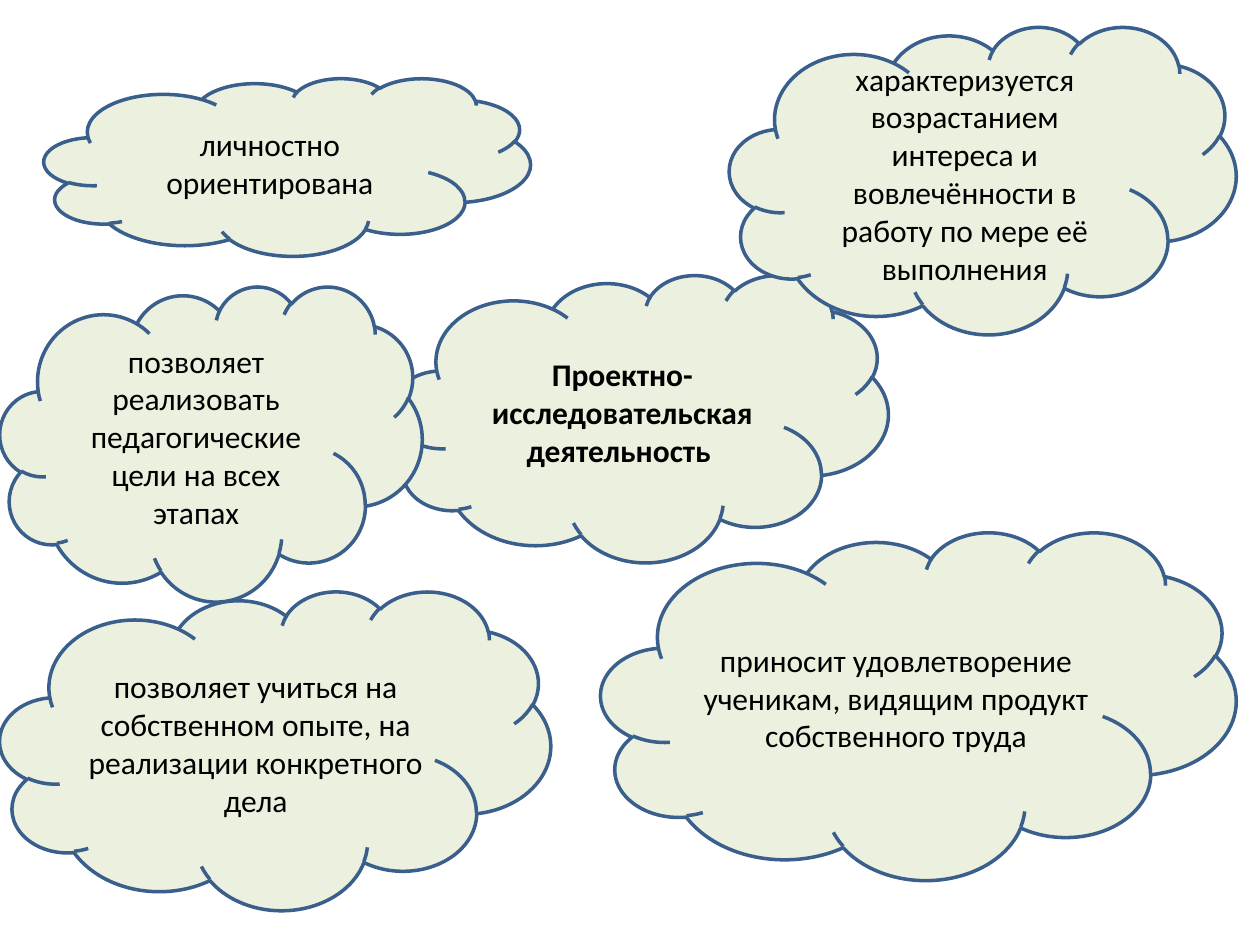
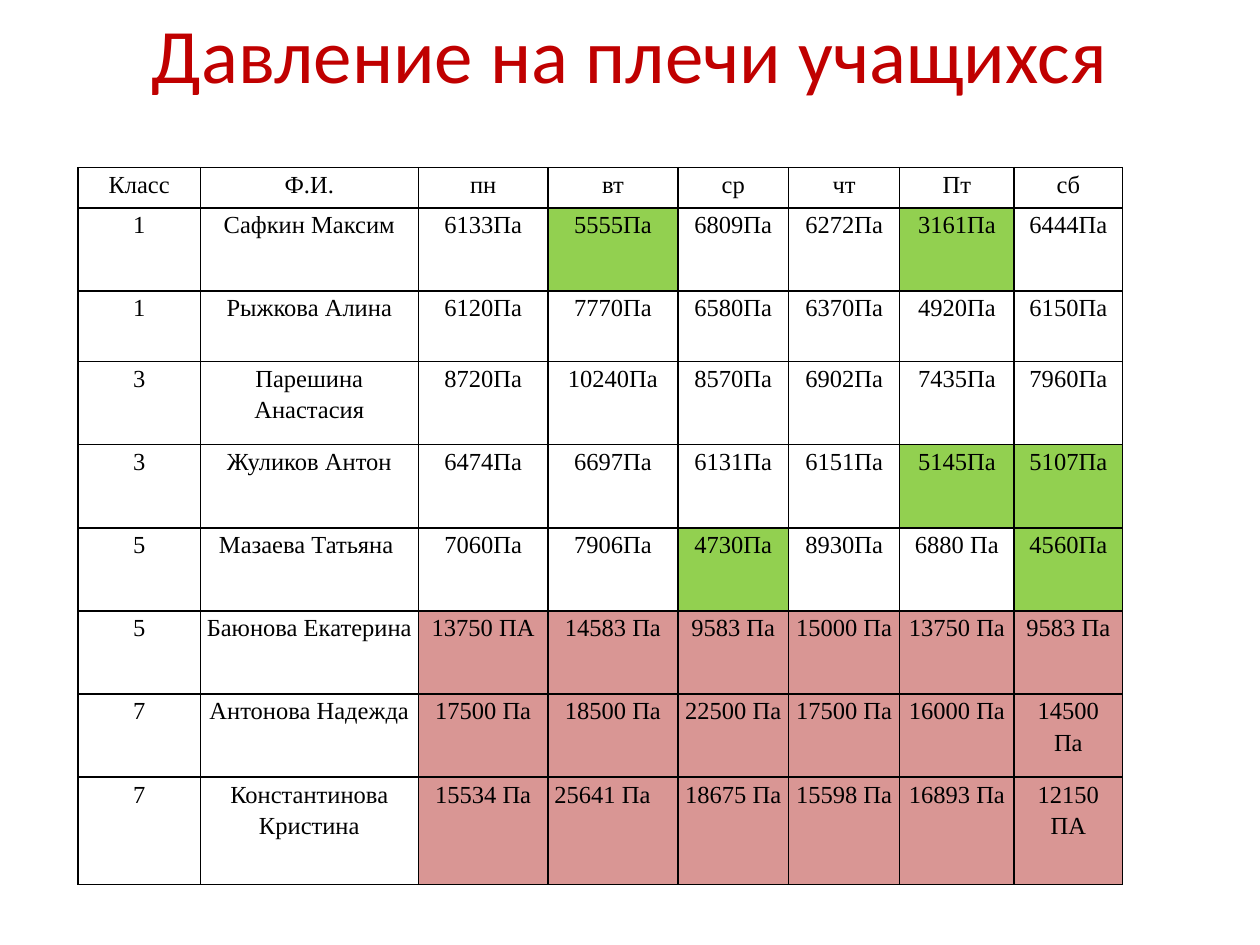
from lxml.etree import SubElement
from pptx import Presentation
from pptx.dml.color import RGBColor
from pptx.enum.shapes import MSO_SHAPE
from pptx.enum.text import MSO_ANCHOR, PP_ALIGN
from pptx.oxml.ns import qn
from pptx.util import Inches, Pt

BLACK = "000000"
RED = "C00000"
CLOUD_FILL = "EBF1DE"
CLOUD_LINE = "3A5F8C"
LIGHT_LOAD = "92D050"
HEAVY_LOAD = "D99694"


def format_text(para, font_name, size, colour, bold=False, align=PP_ALIGN.CENTER):
    para.alignment = align
    for span in para.runs:
        span.font.name = font_name
        span.font.size = Pt(size)
        span.font.bold = bold
        span.font.color.rgb = RGBColor.from_string(colour)


def add_borders(cell, colour, width):
    properties = cell._tc.get_or_add_tcPr()
    for position, side in enumerate(("lnL", "lnR", "lnT", "lnB")):
        line = SubElement(properties, qn(f"a:{side}"), w=str(Pt(width)))
        fill = SubElement(line, qn("a:solidFill"))
        SubElement(fill, qn("a:srgbClr"), val=colour)
        properties.remove(line)
        properties.insert(position, line)


deck = Presentation()
deck.slide_width = Inches(10)
deck.slide_height = Inches(7.5)

page = deck.slides.add_slide(deck.slide_layouts[6])
clouds = [
    (3.11, 2.18, 3.94, 2.28, "Проектно-исследовательская деятельность "),
    (0.35, 0.62, 3.86, 1.41, "личностно ориентирована"),
    (5.79, 0.21, 4.02, 2.44, "характеризуется возрастанием интереса и вовлечённости в работу по мере её выполнения"),
    (0, 2.27, 3.35, 2.5, "позволяет реализовать педагогические цели на всех этапах"),
    (0, 4.69, 4.37, 2.53, "позволяет учиться на собственном опыте, на реализации конкретного дела"),
    (4.77, 4.22, 5.04, 2.76, "приносит удовлетворение ученикам, видящим продукт собственного труда"),
]
for index, (left, top, width, height, text) in enumerate(clouds):
    cloud = page.shapes.add_shape(
        MSO_SHAPE.CLOUD, Inches(left), Inches(top), Inches(width), Inches(height))
    cloud.shadow.inherit = False
    cloud.fill.solid()
    cloud.fill.fore_color.rgb = RGBColor.from_string(CLOUD_FILL)
    cloud.line.color.rgb = RGBColor.from_string(CLOUD_LINE)
    cloud.line.width = Pt(2)
    cloud.text_frame.text = text
    cloud.text_frame.word_wrap = True
    cloud.text_frame.vertical_anchor = MSO_ANCHOR.MIDDLE
    format_text(cloud.text_frame.paragraphs[0], "Calibri", 18, BLACK, bold=index == 0)

page = deck.slides.add_slide(deck.slide_layouts[5])
title = page.shapes.title
title.left, title.top, title.width, title.height = Inches(0.5), Inches(0), Inches(9), Inches(1.09)
title.text_frame.text = "Давление на плечи учащихся"
title.text_frame.vertical_anchor = MSO_ANCHOR.TOP
format_text(title.text_frame.paragraphs[0], "Calibri", 44, RED)

pressures = [
    ("Класс", "Ф.И.", "пн", "вт", "ср", "чт", "Пт", "сб"),
    ("1", "Сафкин Максим", "6133Па", "5555Па", "6809Па", "6272Па", "3161Па", "6444Па"),
    ("1", "Рыжкова Алина", "6120Па", "7770Па", "6580Па", "6370Па", "4920Па", "6150Па"),
    ("3", "Парешина Анастасия", "8720Па", "10240Па", "8570Па", "6902Па", "7435Па", "7960Па"),
    ("3", "Жуликов Антон", "6474Па", "6697Па", "6131Па", "6151Па", "5145Па", "5107Па"),
    ("5", "Мазаева Татьяна ", "7060Па", "7906Па", "4730Па", "8930Па", "6880 Па", "4560Па"),
    ("5", "Баюнова Екатерина", "13750 ПА", "14583 Па", "9583 Па", "15000 Па", "13750 Па", "9583 Па"),
    ("7", "Антонова Надежда", "17500 Па", "18500 Па", "22500 Па", "17500 Па", "16000 Па", "14500 Па"),
    ("7", "Константинова Кристина", "15534 Па", "25641 Па", "18675 Па", "15598 Па", "16893 Па", "12150 ПА"),
]
column_widths = [0.97, 1.73, 1.03, 1.03, 0.88, 0.88, 0.91, 0.86]
row_heights = [0.32, 0.66, 0.56, 0.66, 0.66, 0.66, 0.66, 0.66, 0.85]
light_cells = {(1, 3), (1, 6), (4, 6), (4, 7), (5, 4), (5, 7)}
first_heavy_row, first_day_column = 6, 2
left_aligned_cell = (8, 3)

table = page.shapes.add_table(
    len(row_heights), len(column_widths), Inches(0.62), Inches(1.33),
    Inches(sum(column_widths)), Inches(sum(row_heights))).table
table.first_row = False
table.horz_banding = False
for column, width in zip(table.columns, column_widths):
    column.width = Inches(width)
for row, height in zip(table.rows, row_heights):
    row.height = Inches(height)

for row_index, values in enumerate(pressures):
    for column_index, value in enumerate(values):
        position = (row_index, column_index)
        cell = table.cell(*position)
        cell.margin_left = cell.margin_right = Inches(0.05)
        cell.margin_top = cell.margin_bottom = Inches(0)
        if position in light_cells:
            cell.fill.solid()
            cell.fill.fore_color.rgb = RGBColor.from_string(LIGHT_LOAD)
        elif row_index >= first_heavy_row and column_index >= first_day_column:
            cell.fill.solid()
            cell.fill.fore_color.rgb = RGBColor.from_string(HEAVY_LOAD)
        else:
            cell.fill.background()
        add_borders(cell, BLACK, 1)
        cell.text_frame.text = value
        para = cell.text_frame.paragraphs[0]
        para.line_spacing = 1.15
        align = PP_ALIGN.LEFT if position == left_aligned_cell else PP_ALIGN.CENTER
        format_text(para, "Times New Roman", 14, BLACK, align=align)

deck.save("out.pptx")
